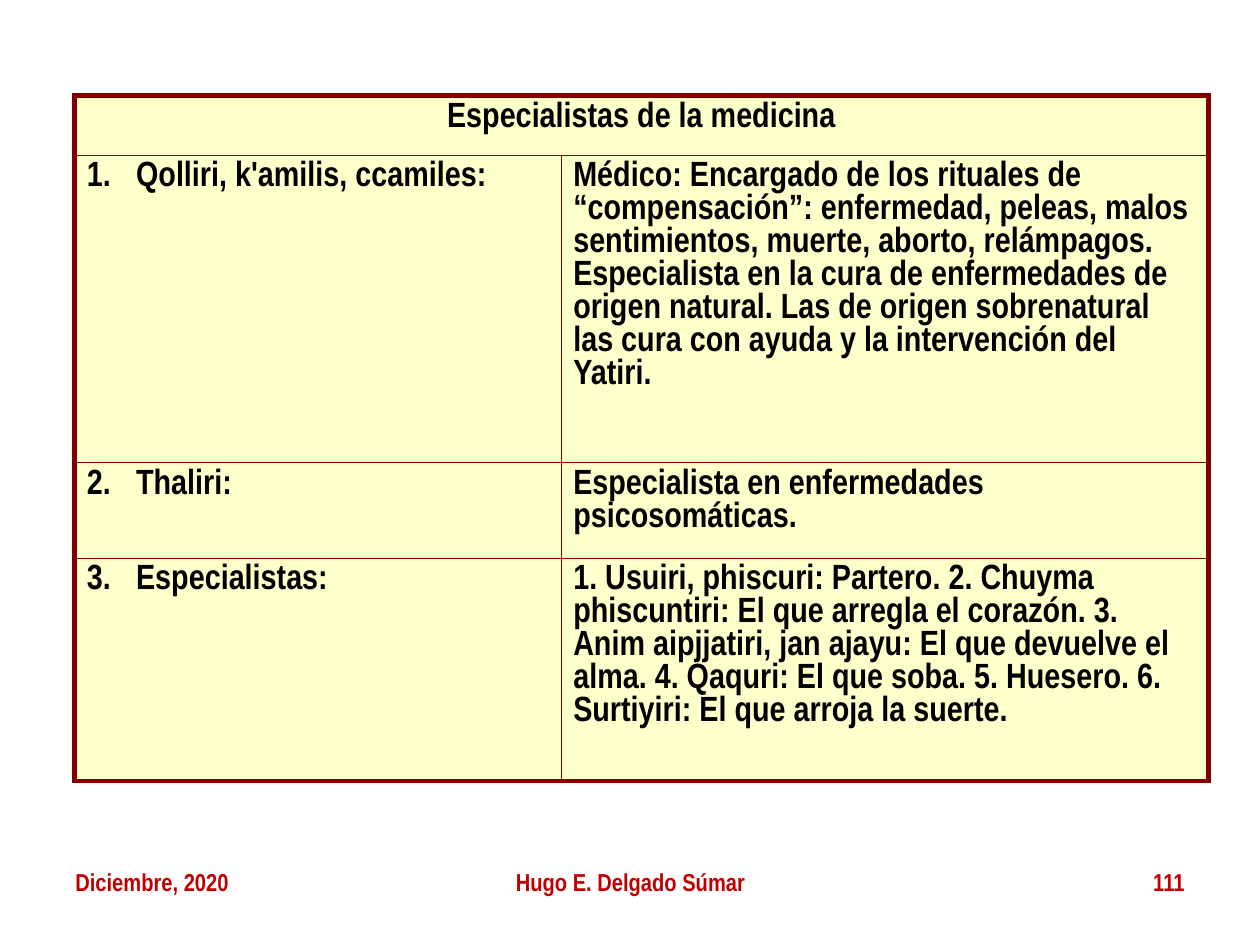
"""Build the slide with the table of specialists in medicine."""
from lxml.etree import SubElement
from pptx import Presentation
from pptx.dml.color import RGBColor
from pptx.enum.text import PP_ALIGN
from pptx.oxml import parse_xml
from pptx.oxml.ns import nsdecls, qn
from pptx.util import Inches, Pt

COLORS = {"text": "000000", "footer": "C00000", "fill": "FFFFCC", "border": "800000"}


def write_text(paragraph, text, size=20, color="text", align=PP_ALIGN.LEFT):
    paragraph.alignment = align
    run = paragraph.add_run()
    run.text = text
    run.font.name = "Arial Narrow"
    run.font.size = Pt(size)
    run.font.bold = True
    run.font.color.rgb = RGBColor.from_string(COLORS[color])


def set_borders(cell, outer_sides):
    properties = cell._tc.get_or_add_tcPr()
    for index, side in enumerate("LRTB"):
        width = Pt(3 if side in outer_sides else 0.25)
        properties.insert(index, parse_xml(
            f'<a:ln{side} {nsdecls("a")} w="{width}"><a:solidFill>'
            f'<a:srgbClr val="{COLORS["border"]}"/></a:solidFill></a:ln{side}>'))


presentation = Presentation()
presentation.slide_width = Inches(10)
presentation.slide_height = Inches(7.5)
slide = presentation.slides.add_slide(presentation.slide_layouts[6])

rows = [
    ("Especialistas de la medicina", ""),
    ("1. \tQolliri, k'amilis, ccamiles:",
     "Médico: Encargado de los rituales de “compensación”: enfermedad, peleas, malos "
     "sentimientos, muerte, aborto, relámpagos. Especialista en la cura de enfermedades de "
     "origen natural. Las de origen sobrenatural las cura con ayuda y la intervención del "
     "Yatiri."),
    ("2. \tThaliri:", "Especialista en enfermedades psicosomáticas."),
    ("3. \tEspecialistas:",
     "1. Usuiri, phiscuri: Partero. 2. Chuyma phiscuntiri: El que arregla el corazón. "
     "3. Anim aipjjatiri, jan ajayu: El que devuelve el alma. 4. Qaquri: El que soba. "
     "5. Huesero. 6. Surtiyiri: El que arroja la suerte."),
]
column_widths = [3.86, 5.14]
row_heights = [0.47, 2.44, 0.76, 1.77]

table = slide.shapes.add_table(
    len(rows), 2, Inches(0.59), Inches(0.76),
    Inches(sum(column_widths)), Inches(sum(row_heights))).table
table.first_row = False
table.horz_banding = False
for column, width in zip(table.columns, column_widths):
    column.width = Inches(width)
for row, height in zip(table.rows, row_heights):
    row.height = Inches(height)
table.cell(0, 0).merge(table.cell(0, 1))

for row_index, texts in enumerate(rows):
    for column_index, text in enumerate(texts):
        cell = table.cell(row_index, column_index)
        cell.fill.solid()
        cell.fill.fore_color.rgb = RGBColor.from_string(COLORS["fill"])
        outer_sides = "R" if column_index else "L"
        if row_index == 0:
            outer_sides = "LRT"
        elif row_index == len(rows) - 1:
            outer_sides += "B"
        set_borders(cell, outer_sides)
        if not text:
            continue
        paragraph = cell.text_frame.paragraphs[0]
        write_text(paragraph, text, align=PP_ALIGN.LEFT if row_index else PP_ALIGN.CENTER)
        properties = paragraph._p.get_or_add_pPr()
        spacing = SubElement(properties, qn("a:spcBef"))
        SubElement(spacing, qn("a:spcPct")).set("val", "20000")
        if row_index and column_index == 0:
            properties.set("marL", str(Inches(0.39)))
            properties.set("indent", str(Inches(-0.39)))

footers = [
    ("Diciembre, 2020", 0.5, 2.33, PP_ALIGN.LEFT),
    ("Hugo E. Delgado Súmar", 3.42, 3.17, PP_ALIGN.CENTER),
    ("111", 7.17, 2.33, PP_ALIGN.RIGHT),
]
for text, left, width, align in footers:
    shape = slide.shapes.add_textbox(Inches(left), Inches(6.83), Inches(width), Inches(0.52))
    shape.text_frame.word_wrap = True
    write_text(shape.text_frame.paragraphs[0], text, size=14, color="footer", align=align)

presentation.save("out.pptx")
